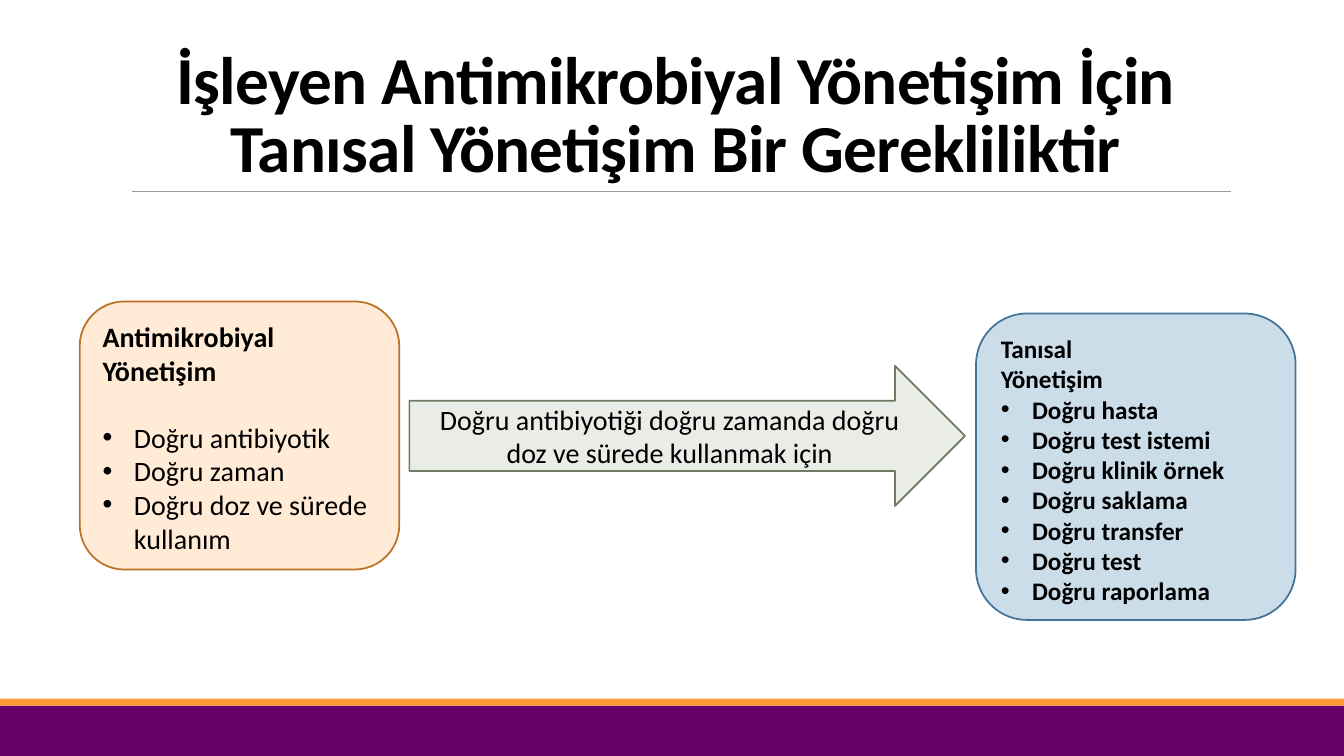
from dataclasses import dataclass

from lxml.etree import SubElement
from pptx import Presentation
from pptx.dml.color import RGBColor
from pptx.enum.shapes import MSO_CONNECTOR, MSO_SHAPE
from pptx.enum.text import MSO_ANCHOR, PP_ALIGN
from pptx.oxml.ns import qn
from pptx.util import Inches, Pt

TITLE = "İşleyen Antimikrobiyal Yönetişim İçin Tanısal Yönetişim Bir Gerekliliktir"
ARROW_TEXT = "Doğru antibiyotiği doğru zamanda doğru doz ve sürede kullanmak için"
ANTIMICROBIAL = {
    "headings": ["Antimikrobiyal Yönetişim"],
    "bullets": ["Doğru antibiyotik", "Doğru zaman", "Doğru doz ve sürede kullanım"],
}
DIAGNOSTIC = {
    "headings": ["Tanısal", "Yönetişim"],
    "bullets": ["Doğru hasta", "Doğru test istemi", "Doğru klinik örnek", "Doğru saklama",
                "Doğru transfer", "Doğru test", "Doğru raporlama"],
}


@dataclass(frozen=True)
class Theme:
    font: str = "Calibri"
    text: str = "000000"
    purple: str = "660066"
    orange: str = "FF9933"
    rule: str = "999999"
    antimicrobial: tuple = ("FFEBD6", "BD7126")
    arrow: tuple = ("EAECE7", "6F7B63")
    diagnostic: tuple = ("CCDDEA", "40749B")
    title_size: int = 48
    body_size: int = 20
    list_size: int = 18
    outline: float = 1.25
    hairline: float = 0.5


THEME = Theme()
WIDTH, HEIGHT = Inches(13.33), Inches(7.5)

# Left, top, width, height in percent of the slide
TITLE_AREA = (9, 4.13, 82.52, 21.2)
RULE_LEFT, RULE_RIGHT = 9.83, 91.6
RULE_TOP = TITLE_AREA[1] + TITLE_AREA[3]
BOX_WIDTH = 23.78
ANTIMICROBIAL_AREA = (5.93, 39.87, BOX_WIDTH, 35.47)
ARROW_AREA = (30.46, 48.4, 41.34, 18.53)
DIAGNOSTIC_AREA = (72.62, 41.47, BOX_WIDTH, 40.53)
FOOTER_TOP, STRIPE_HEIGHT = 93.33, 0.93
BULLET_INDENT = Inches(0.31)


def column(percent):
    return round(WIDTH * percent / 100)


def row(percent):
    return round(HEIGHT * percent / 100)


def place(area):
    left, top, width, height = area
    return column(left), row(top), column(width), row(height)


def add_block(slide, kind, area, fill, line=None):
    shape = slide.shapes.add_shape(kind, *place(area))
    shape.shadow.inherit = False
    shape.fill.solid()
    shape.fill.fore_color.rgb = RGBColor.from_string(fill)
    if line:
        shape.line.color.rgb = RGBColor.from_string(line)
        shape.line.width = Pt(THEME.outline)
    else:
        shape.line.fill.background()
    return shape


def add_bullet(paragraph):
    properties = paragraph._p.get_or_add_pPr()
    properties.set("marL", str(BULLET_INDENT))
    properties.set("indent", str(-BULLET_INDENT))
    SubElement(properties, qn("a:buFont"), typeface="Arial")
    SubElement(properties, qn("a:buChar"), char="•")


def write(shape, lines, anchor):
    """Fill a shape with (text, size, bold, bulleted, paragraph format) lines."""
    frame = shape.text_frame
    frame.word_wrap = True
    frame.vertical_anchor = anchor
    for index, (text, size, bold, bulleted, layout) in enumerate(lines):
        paragraph = frame.add_paragraph() if index else frame.paragraphs[0]
        if bulleted:
            add_bullet(paragraph)
        for name, value in layout.items():
            setattr(paragraph, name, value)
        run = paragraph.add_run()
        run.text = text
        for name, value in {"name": THEME.font, "size": Pt(size), "bold": bold}.items():
            setattr(run.font, name, value)
        run.font.color.rgb = RGBColor.from_string(THEME.text)


def add_list_box(slide, area, colors, content, size, bold_bullets, gap):
    left = {"alignment": PP_ALIGN.LEFT}
    lines = [(text, size, True, False, left) for text in content["headings"]]
    for index, text in enumerate(content["bullets"]):
        layout = left if index else {**left, "space_before": Pt(gap)}
        lines.append((text, size, bold_bullets, True, layout))
    box = add_block(slide, MSO_SHAPE.ROUNDED_RECTANGLE, area, *colors)
    write(box, lines, MSO_ANCHOR.TOP)


def add_rule(slide):
    rule = slide.shapes.add_connector(
        MSO_CONNECTOR.STRAIGHT, column(RULE_LEFT), row(RULE_TOP), column(RULE_RIGHT), row(RULE_TOP))
    rule.line.color.rgb = RGBColor.from_string(THEME.rule)
    rule.line.width = Pt(THEME.hairline)
    SubElement(rule._element.spPr, qn("a:effectLst"))


def add_title(slide):
    title = slide.shapes.add_textbox(*place(TITLE_AREA))
    layout = {"alignment": PP_ALIGN.CENTER, "line_spacing": 0.85}
    write(title, [(TITLE, THEME.title_size, True, False, layout)], MSO_ANCHOR.BOTTOM)
    run = title.text_frame.paragraphs[0].runs[0]
    run.font._element.set("spc", "-50")


def main():
    presentation = Presentation()
    presentation.slide_width, presentation.slide_height = WIDTH, HEIGHT
    slide = presentation.slides.add_slide(presentation.slide_layouts[6])

    add_block(slide, MSO_SHAPE.RECTANGLE, (0, FOOTER_TOP, 100, 100 - FOOTER_TOP), THEME.purple)
    add_block(slide, MSO_SHAPE.RECTANGLE,
              (0, FOOTER_TOP - STRIPE_HEIGHT, 100, STRIPE_HEIGHT), THEME.orange)
    add_rule(slide)
    add_list_box(slide, ANTIMICROBIAL_AREA, THEME.antimicrobial, ANTIMICROBIAL,
                 THEME.body_size, bold_bullets=False, gap=24)
    arrow = add_block(slide, MSO_SHAPE.RIGHT_ARROW, ARROW_AREA, *THEME.arrow)
    write(arrow, [(ARROW_TEXT, THEME.body_size, False, False, {"alignment": PP_ALIGN.CENTER})],
          MSO_ANCHOR.MIDDLE)
    add_title(slide)
    add_list_box(slide, DIAGNOSTIC_AREA, THEME.diagnostic, DIAGNOSTIC,
                 THEME.list_size, bold_bullets=True, gap=0)
    presentation.save("out.pptx")


if __name__ == "__main__":
    main()
